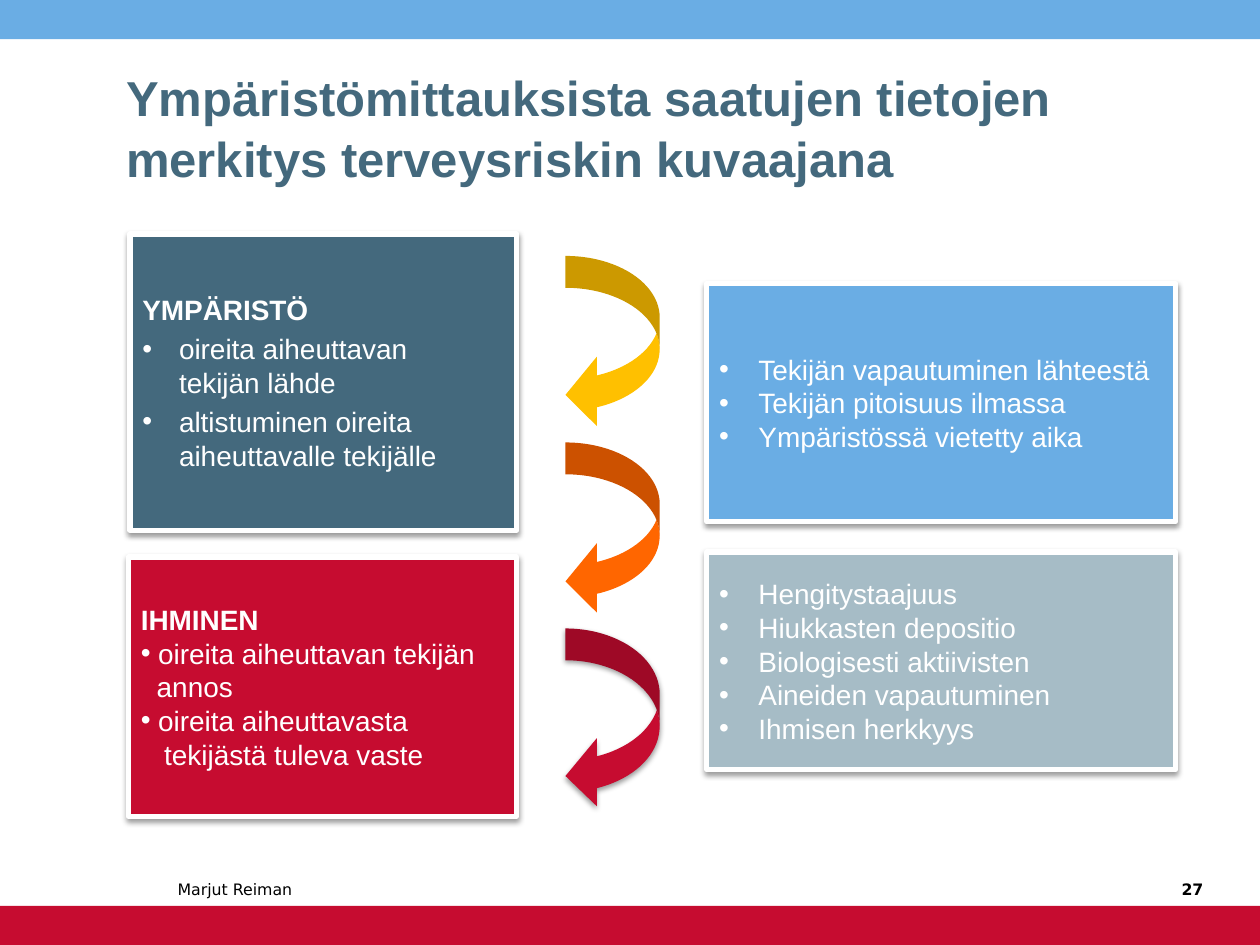
"""Build the slide on environmental measurements and health risk."""
import lxml.etree
import pptx
import pptx.dml.color
import pptx.enum.shapes
import pptx.enum.text
import pptx.oxml
import pptx.oxml.ns
import pptx.util

Cm, Pt = pptx.util.Cm, pptx.util.Pt
SHAPE = pptx.enum.shapes.MSO_SHAPE
ALIGN = pptx.enum.text.PP_ALIGN
ANCHOR = pptx.enum.text.MSO_ANCHOR
qn = pptx.oxml.ns.qn

HUES = {"white": "FFFFFF", "black": "000000", "slate": "44697D", "red": "C60C30",
        "blue": "6AADE4", "grey": "A6BCC6", "orange": "FF6600", "gold": "FFC000"}
WHITE = {"name": "Arial", "size": Pt(16), "bold": False}
HEAD = {**WHITE, "bold": True}
SMALL = {"name": "DejaVu Sans", "size": Pt(9), "bold": False}
TITLE = {"name": "Arial", "size": Pt(28), "bold": True}


def paint(part, hue):
    """Give a fill or a font its colour."""
    if hasattr(part, "solid"):
        part.solid()
        part = part.fore_color
    else:
        part = part.color
    part.rgb = pptx.dml.color.RGBColor.from_string(HUES[hue])


def apply(thing, values):
    """Set each attribute named in a dict."""
    for name, value in values.items():
        setattr(thing, name, value)


def place(left, top, width, height):
    """Turn centimetres into a position and a size."""
    return [Cm(value) for value in (left, top, width, height)]


def shade(shape):
    """Add a soft shadow below a shape."""
    effects = shape.element.spPr.find(qn("a:effectLst"))
    outer = lxml.etree.SubElement(effects, qn("a:outerShdw"), blurRad="40000",
                                  dist="20000", dir="5400000", rotWithShape="0")
    color = lxml.etree.SubElement(outer, qn("a:srgbClr"), val=HUES["black"])
    lxml.etree.SubElement(color, qn("a:alpha"), val="38000")


def draw(slide, kind, spot, hue):
    """Add a flat filled shape."""
    shape = slide.shapes.add_shape(kind, *place(*spot))
    shape.shadow.inherit = False
    paint(shape.fill, hue)
    shape.line.fill.background()
    return shape


def mark(para):
    """Put a white bullet on a paragraph."""
    props = para._p.get_or_add_pPr()
    color = lxml.etree.SubElement(props, qn("a:buClr"))
    lxml.etree.SubElement(color, qn("a:srgbClr"), val=HUES["white"])
    lxml.etree.SubElement(props, qn("a:buFont"), typeface="Arial")
    lxml.etree.SubElement(props, qn("a:buChar"), char="•")


def write(para, text, font, hue, align=ALIGN.LEFT):
    """Fill a paragraph and format its text."""
    para.text = text
    para.alignment = align
    apply(para.font, font)
    paint(para.font, hue)


def panel(slide, spot, hue, rows, gap=0):
    """Add a framed box of rows: text, left margin, bullet or not."""
    box = draw(slide, SHAPE.RECTANGLE, spot, hue)
    paint(box.line.fill, "white")
    box.line.width = Pt(3)
    shade(box)
    frame = box.text_frame
    apply(frame, {"word_wrap": True, "vertical_anchor": ANCHOR.MIDDLE})
    for index, (text, left, dot) in enumerate(rows):
        para = frame.add_paragraph() if index else frame.paragraphs[0]
        if dot:
            mark(para)
        props = para._p.get_or_add_pPr()
        props.set("marL", str(Cm(left)))
        props.set("indent", str(-Cm(left) if dot else 0))
        if index and gap:
            para.space_before = Pt(gap)
        write(para, text, WHITE if left else HEAD, "white")


def arrow(slide, top, height, bend, hue):
    """Add a curved arrow and return it."""
    shape = draw(slide, SHAPE.CURVED_LEFT_ARROW, (11.4, top, 1.9, height), hue)
    for index, value in enumerate((0.338, bend, 0.333)):
        shape.adjustments[index] = value
    return shape


def label(slide, spot, text, font, align):
    """Add a line of small text at the foot."""
    frame = slide.shapes.add_textbox(*place(*spot)).text_frame
    apply(frame, {"word_wrap": True, "vertical_anchor": ANCHOR.BOTTOM})
    write(frame.paragraphs[0], text, font, "black", align)


def head(slide, text):
    """Place and format the title."""
    title = slide.shapes.title
    spot = place(2.29, 0.91, 20.8, 3)
    apply(title, dict(zip(("left", "top", "width", "height"), spot)))
    apply(title.text_frame, {"word_wrap": True, "vertical_anchor": ANCHOR.BOTTOM,
                             "auto_size": pptx.enum.text.MSO_AUTO_SIZE.NONE})
    para = title.text_frame.paragraphs[0]
    write(para, text, TITLE, "slate")
    para.line_spacing = 1.05


def main():
    """Build and save the slide."""
    deck = pptx.Presentation()
    apply(deck, {"slide_width": Cm(25.4), "slide_height": Cm(19.05)})
    slide = deck.slides.add_slide(deck.slide_layouts[5])
    for top, hue in ((0, "blue"), (18.26, "red")):
        draw(slide, SHAPE.RECTANGLE, (0, top, 25.4, 0.79), hue)
    head(slide, "Ympäristömittauksista saatujen tietojen merkitys terveysriskin kuvaajana")
    label(slide, (3.33, 17.22, 5, 1.02), "Marjut Reiman", SMALL, ALIGN.LEFT)
    label(slide, (23.11, 17.22, 1.4, 1.02), "27", {**SMALL, "bold": True}, ALIGN.RIGHT)

    panel(slide, (2.62, 4.72, 7.8, 5.97), "slate", [
        ("YMPÄRISTÖ", 0, False),
        ("oireita aiheuttavan\vtekijän lähde", 0.74, True),
        ("altistuminen oireita\vaiheuttavalle tekijälle", 0.74, True)], gap=3.2)
    panel(slide, (2.59, 11.23, 7.82, 5.23), "red", [
        ("IHMINEN", 0, False),
        ("oireita aiheuttavan tekijän", 0.35, True),
        ("annos", 0.32, False),
        ("oireita aiheuttavasta", 0.35, True),
        ("tekijästä tuleva vaste", 0.47, False)])
    lists = (
        (5.72, 4.8, "blue", ("Tekijän vapautuminen lähteestä",
                             "Tekijän pitoisuus ilmassa",
                             "Ympäristössä vietetty aika")),
        (11.13, 4.39, "grey", ("Hengitystaajuus", "Hiukkasten depositio",
                               "Biologisesti aktiivisten",
                               "Aineiden vapautuminen", "Ihmisen herkkyys")))
    for top, height, hue, texts in lists:
        panel(slide, (14.25, top, 9.45, height), hue,
              [(text, 0.79, True) for text in texts])

    arrow(slide, 5.16, 3.5, 0.735, "gold")
    arrow(slide, 8.92, 3.5, 0.735, "orange")
    shade(arrow(slide, 12.67, 3.66, 0.722, "red"))
    deck.save("out.pptx")


if __name__ == "__main__":
    main()
